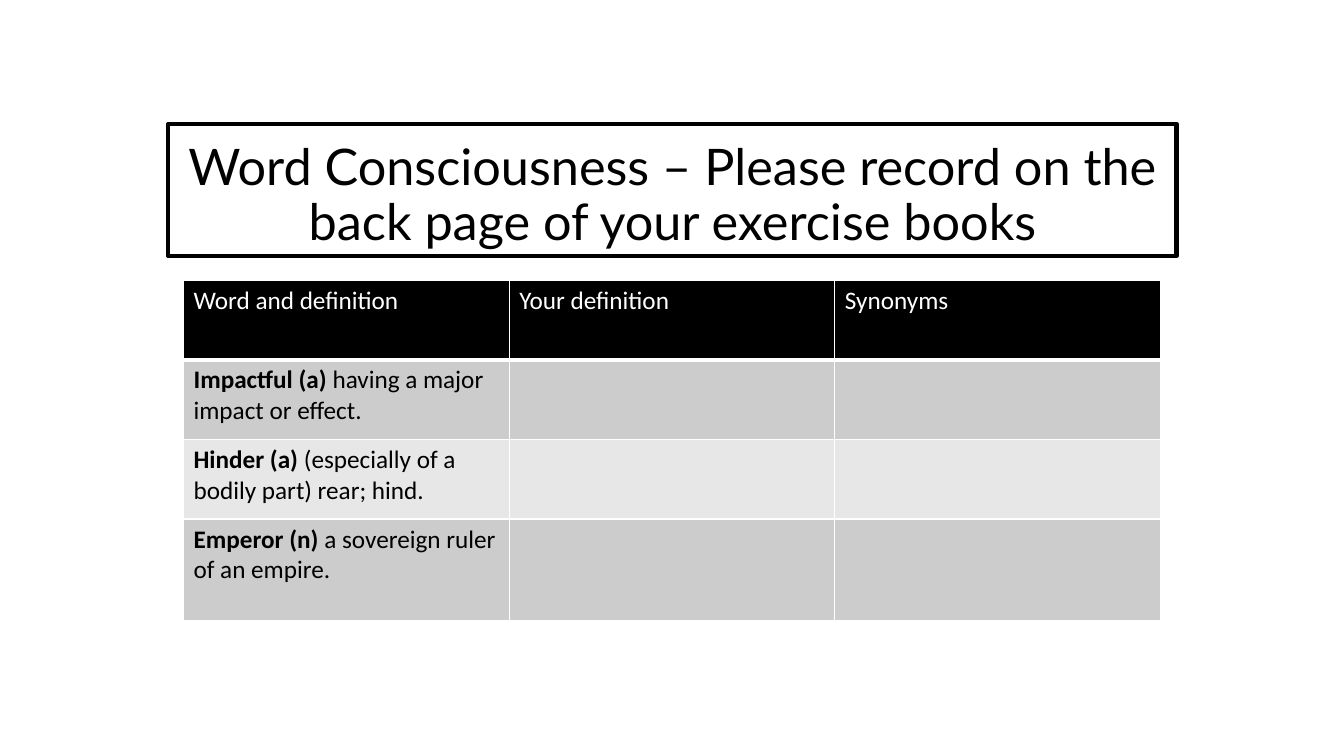
from dataclasses import dataclass

from lxml import etree
from pptx import Presentation
from pptx import util as u
from pptx.dml.color import RGBColor
from pptx.enum import shapes, text
from pptx.oxml import ns


@dataclass(frozen=True)
class Theme:
    ink: str = "000000"
    paper: str = "FFFFFF"
    bands: tuple = ("CCCCCC", "E7E7E7")
    head_font: str = "Lato"
    body_font: str = "Calibri"
    head_size: int = 36
    body_size: int = 18


theme = Theme()


def add_run(par, words, color, **form):
    run = par.add_run()
    run.text = words
    run.font.color.rgb = RGBColor.from_string(color)
    for name, value in form.items():
        setattr(run.font, name, value)


def add_edge(cell, side, width):
    """Draw one border of a table cell, with its width in points."""
    props = cell._tc.get_or_add_tcPr()
    line = etree.SubElement(props, ns.qn(f"a:ln{side}"), w=str(u.Pt(width)))
    fill = etree.SubElement(line, ns.qn("a:solidFill"))
    etree.SubElement(fill, ns.qn("a:srgbClr"), val=theme.paper)


deck = Presentation()
deck.slide_width, deck.slide_height = u.Inches(13.33), u.Inches(7.5)
slide = deck.slides.add_slide(deck.slide_layouts[6])

# Title box
title = slide.shapes.add_shape(
    shapes.MSO_SHAPE.RECTANGLE,
    u.Inches(1.67), u.Inches(1.23), u.Inches(10), u.Inches(1.31))
title.shadow.inherit = False
title.fill.solid()
title.fill.fore_color.rgb = RGBColor.from_string(theme.paper)
tint = title._element.spPr.find(".//" + ns.qn("a:srgbClr"))
etree.SubElement(tint, ns.qn("a:alpha"), val="64000")
title.line.color.rgb = RGBColor.from_string(theme.ink)
title.line.width = u.Pt(3)
etree.SubElement(title.line._get_or_add_ln(), ns.qn("a:round"))
frame = title.text_frame
frame.word_wrap = True
frame.vertical_anchor = text.MSO_ANCHOR.BOTTOM
par = frame.paragraphs[0]
par.alignment = text.PP_ALIGN.CENTER
par.line_spacing = 0.9
add_run(par, "Word Consciousness – Please record on the back page of your exercise books",
        theme.ink, size=u.Pt(theme.head_size), name=theme.head_font)

# Word table: each cell holds a bold part and a plain part
rows = [
    [("", "Word and definition"), ("", "Your definition"), ("", "Synonyms")],
    [("Impactful (a) ", "having a major impact or effect.")],
    [("Hinder (a) ", "(especially of a bodily part) rear; hind.")],
    [("Emperor (n) ", "a sovereign ruler of an empire.")],
]
heights = [0.79, 0.79, 0.79, 1.01]
table = slide.shapes.add_table(
    len(rows), 3, u.Inches(1.82), u.Inches(2.78),
    u.Inches(9.69), u.Inches(sum(heights))).table
for col in table.columns:
    col.width = u.Inches(3.23)

for i, row in enumerate(rows):
    table.rows[i].height = u.Inches(heights[i])
    back = theme.bands[(i - 1) % 2] if i else theme.ink
    color = theme.ink if i else theme.paper
    for j, cell in enumerate(table.rows[i].cells):
        for side in "LRTB":
            add_edge(cell, side, 3 if i == 0 and side == "B" else 1)
        cell.fill.solid()
        cell.fill.fore_color.rgb = RGBColor.from_string(back)
        if j < len(row):
            for words, bold in zip(row[j], (True, False)):
                if words:
                    add_run(cell.text_frame.paragraphs[0], words, color, bold=bold,
                            size=u.Pt(theme.body_size), name=theme.body_font)

deck.save("out.pptx")
